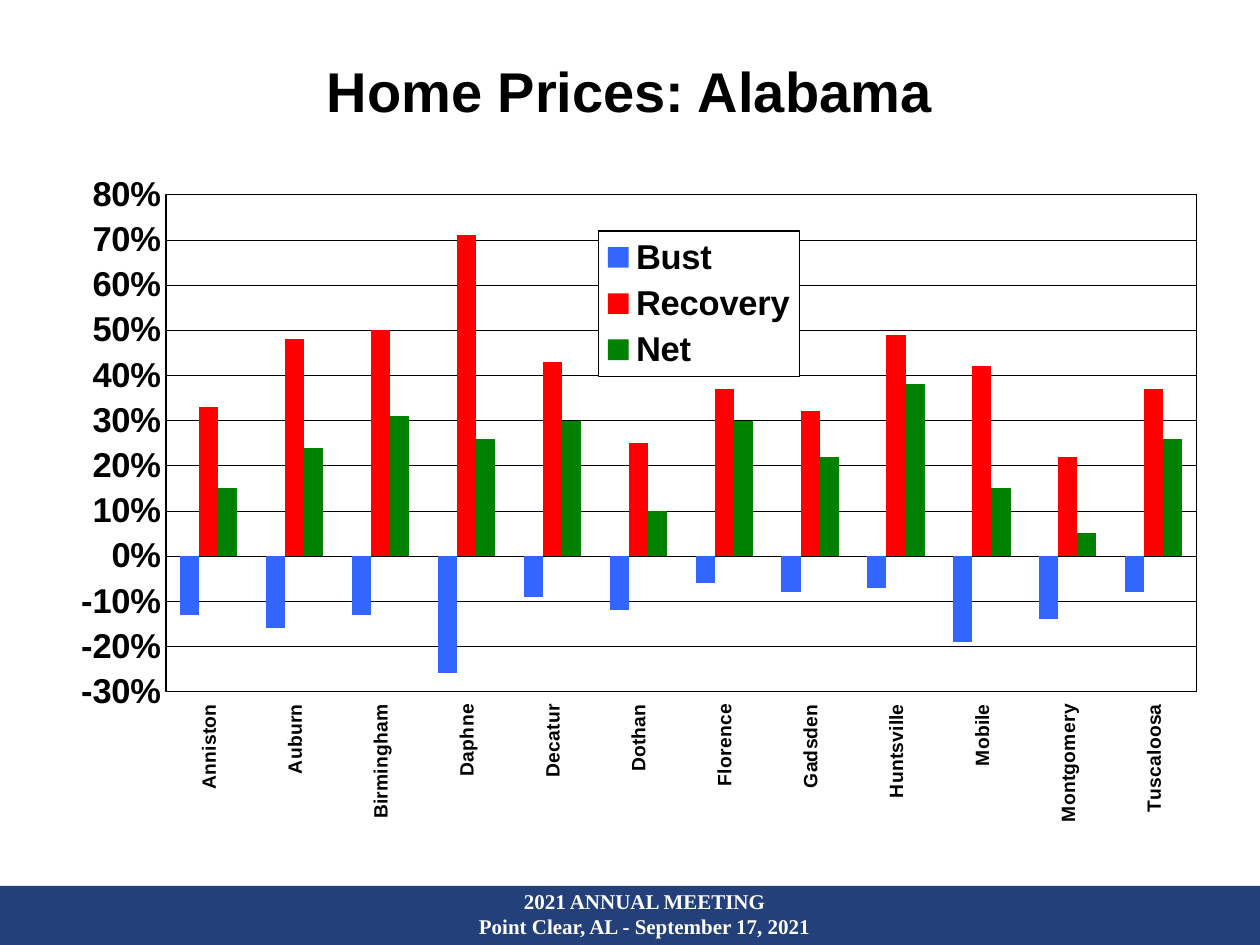
"""Build the slide on home prices in Alabama."""
from lxml import etree
from pptx import Presentation
from pptx import util as u
from pptx.chart.data import CategoryChartData
from pptx.dml.color import RGBColor
from pptx.enum import chart as ch, shapes, text
from pptx.oxml import parse_xml
from pptx.oxml.ns import nsdecls, qn

HUES = {"ink": "000000", "paper": "FFFFFF", "band": "23407A",
        "Bust": "3366FF", "Recovery": "FF0000", "Net": "008200"}
TOWNS = ["Anniston", "Auburn", "Birmingham", "Daphne", "Decatur", "Dothan",
         "Florence", "Gadsden", "Huntsville", "Mobile", "Montgomery", "Tuscaloosa"]
RATES = {
    "Bust": [-0.13, -0.16, -0.13, -0.26, -0.09, -0.12,
             -0.06, -0.08, -0.07, -0.19, -0.14, -0.08],
    "Recovery": [0.33, 0.48, 0.5, 0.71, 0.43, 0.25,
                 0.37, 0.32, 0.49, 0.42, 0.22, 0.37],
    "Net": [0.15, 0.24, 0.31, 0.26, 0.3, 0.1,
            0.3, 0.22, 0.38, 0.15, 0.05, 0.26],
}


def hue(name):
    return RGBColor.from_string(HUES[name])


def layout(box, inner=False):
    """Return a manual chart layout for a box given in fractions."""
    node = etree.Element(qn("c:layout"))
    form = etree.SubElement(node, qn("c:manualLayout"))
    parts = [("layoutTarget", "inner")] if inner else []
    parts += [("xMode", "edge"), ("yMode", "edge"), *zip("xywh", box)]
    for key, val in parts:
        etree.SubElement(form, qn(f"c:{key}")).set("val", str(val))
    return node


def frame(fill):
    """Return chart shape properties with a thin dark outline."""
    return parse_xml(f'<c:spPr {nsdecls("c", "a")}>{fill}<a:ln w="9525"><a:solidFill>'
                     f'<a:srgbClr val="{HUES["ink"]}"/></a:solidFill></a:ln></c:spPr>')


class Deck:
    """Hold the style and the current slide."""

    def __init__(self):
        self.show = Presentation()
        self.show.slide_width, self.show.slide_height = u.Cm(25.4), u.Cm(19.05)
        self.slide = self.show.slides.add_slide(self.show.slide_layouts[5])

    def font(self, font, size, name="Arial", tone="ink"):
        font.name, font.size, font.bold = name, u.Pt(size), True
        font.color.rgb = hue(tone)

    def line(self, line):
        line.color.rgb, line.width = hue("ink"), u.Pt(0.25)

    def run(self, para, words, *style):
        para.alignment = text.PP_ALIGN.CENTER
        run = para.add_run()
        run.text = words
        self.font(run.font, *style)

    def title(self, words, *box):
        head = self.slide.shapes.title
        head.left, head.top, head.width, head.height = map(u.Cm, box)
        body = head.text_frame
        body.vertical_anchor = text.MSO_ANCHOR.TOP
        body.margin_top = u.Cm(0.03)
        body.paragraphs[0].line_spacing = 0.89
        self.run(body.paragraphs[0], words, 32)

    def band(self, *box):
        bar = self.slide.shapes.add_shape(shapes.MSO_SHAPE.RECTANGLE, *map(u.Cm, box))
        bar.shadow.inherit = False
        bar.fill.solid()
        bar.fill.fore_color.rgb = hue("band")
        bar.line.fill.background()

    def label(self, lines, *box):
        body = self.slide.shapes.add_textbox(*map(u.Cm, box)).text_frame
        body.word_wrap = True
        for i, words in enumerate(lines):
            para = body.add_paragraph() if i else body.paragraphs[0]
            self.run(para, words, 12, "Times New Roman", "paper")

    def chart(self, *box):
        data = CategoryChartData(number_format="0%")
        data.categories = TOWNS
        for name, vals in RATES.items():
            data.add_series(name, vals)
        chart = self.slide.shapes.add_chart(
            ch.XL_CHART_TYPE.COLUMN_CLUSTERED, *map(u.Cm, box), data).chart
        chart.has_title = False
        self.font(chart.font, 19.7)
        plot = chart.plots[0]
        plot.gap_width, plot.overlap, plot.vary_by_categories = 150, 0, False
        for row in plot.series:
            row.invert_if_negative = False
            row.format.fill.solid()
            row.format.fill.fore_color.rgb = hue(row.name)
        self.axes(chart)
        self.legend(chart)
        area = chart._chartSpace.find(f".//{qn('c:plotArea')}")
        for old in area.findall(qn("c:layout")):
            area.remove(old)
        area.insert(0, layout((0.114, 0.043, 0.877, 0.725), True))
        area.append(frame("<a:noFill/>"))

    def axes(self, chart):
        cat, val = chart.category_axis, chart.value_axis
        for axis, size in ((cat, 11), (val, 19.7)):
            axis.major_tick_mark = axis.minor_tick_mark = ch.XL_TICK_MARK.NONE
            self.font(axis.tick_labels.font, size)
            self.line(axis.format.line)
        cat.tick_label_position = ch.XL_TICK_LABEL_POSITION.LOW
        turn = cat._element.find(f"{qn('c:txPr')}/{qn('a:bodyPr')}")
        turn.set("rot", "-5400000")
        turn.set("vert", "horz")
        val.minimum_scale, val.maximum_scale, val.major_unit = -0.3, 0.8, 0.1
        val.tick_labels.number_format = "0%"
        val.tick_labels.number_format_is_linked = False
        val.has_major_gridlines = True
        self.line(val.major_gridlines.format.line)

    def legend(self, chart):
        chart.has_legend = True
        key = chart.legend
        key.position = ch.XL_LEGEND_POSITION.RIGHT
        key.include_in_layout = False
        self.font(key.font, 19.7)
        node = key._element
        for old in node.findall(qn("c:layout")):
            node.remove(old)
        node.find(qn("c:legendPos")).addnext(layout((0.482, 0.096, 0.171, 0.212)))
        white = f'<a:solidFill><a:srgbClr val="{HUES["paper"]}"/></a:solidFill>'
        node.find(qn("c:txPr")).addprevious(frame(white))


def main():
    deck = Deck()
    deck.band(0, 17.86, 25.4, 1.19)
    deck.label(["2021 ANNUAL MEETING", "Point Clear, AL - September 17, 2021"],
               5.69, 17.78, 14.61, 1.32)
    deck.title("Home Prices: Alabama", 2.11, 1.27, 21.16, 1.7)
    deck.chart(0.64, 3.33, 23.7, 13.82)
    deck.show.save("out.pptx")


if __name__ == "__main__":
    main()
